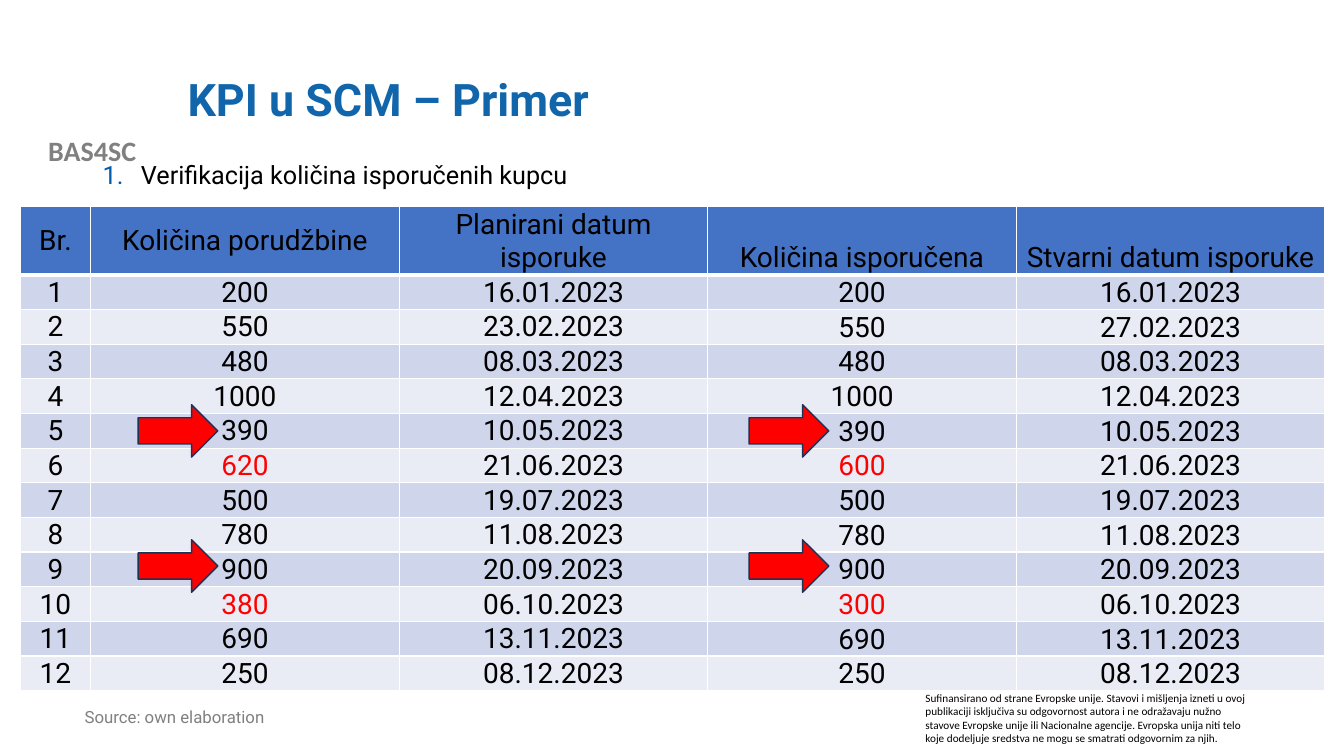
from lxml.etree import SubElement
from pptx import Presentation
from pptx.dml.color import RGBColor
from pptx.enum.shapes import MSO_SHAPE
from pptx.enum.text import MSO_ANCHOR as Anchor, MSO_AUTO_SIZE as AutoSize, PP_ALIGN as Align
from pptx.oxml.ns import qn
from pptx.util import Inches, Pt

BLACK = RGBColor(0x00, 0x00, 0x00)
WHITE = RGBColor(0xFF, 0xFF, 0xFF)
GRAY = RGBColor(0x80, 0x80, 0x80)
RED = RGBColor(0xFF, 0x00, 0x00)
NAVY = RGBColor(0x1E, 0x32, 0x56)
TITLE_BLUE = RGBColor(0x10, 0x65, 0xAB)
NUMBER_BLUE = RGBColor(0x01, 0x5B, 0xA6)
HEADER_BLUE = RGBColor(0x44, 0x72, 0xC4)
BANDS = (RGBColor(0xCF, 0xD5, 0xEA), RGBColor(0xE9, 0xEB, 0xF5))

TITLE = "KPI u SCM – Primer"
PROJECT = "BAS4SC"
SUBTITLE = "Verifikacija količina isporučenih kupcu"
SOURCE = "Source: own elaboration"
DISCLAIMER = (
    "Sufinansirano od strane Evropske unije. Stavovi i mišljenja izneti u ovoj "
    "publikaciji isključiva su odgovornost autora i ne odražavaju nužno stavove "
    "Evropske unije ili Nacionalne agencije. Evropska unija niti telo koje "
    "dodeljuje sredstva ne mogu se smatrati odgovornim za njih."
)
HEADER = ("Br.", "Količina porudžbine", "Planirani datum isporuke",
          "Količina isporučena", "Stvarni datum isporuke")
DELIVERIES = [  # ordered, planned date, delivered, actual date
    ("200", "16.01.2023", "200", "16.01.2023"),
    ("550", "23.02.2023", "550", "27.02.2023"),
    ("480", "08.03.2023", "480", "08.03.2023"),
    ("1000", "12.04.2023", "1000", "12.04.2023"),
    ("390", "10.05.2023", "390", "10.05.2023"),
    ("620", "21.06.2023", "600", "21.06.2023"),
    ("500", "19.07.2023", "500", "19.07.2023"),
    ("780", "11.08.2023", "780", "11.08.2023"),
    ("900", "20.09.2023", "900", "20.09.2023"),
    ("380", "06.10.2023", "300", "06.10.2023"),
    ("690", "13.11.2023", "690", "13.11.2023"),
    ("250", "08.12.2023", "250", "08.12.2023"),
]

TABLE_LEFT, TABLE_TOP = 0.2, 2.05
NUMBER_WIDTH, COLUMN_WIDTH = 0.7, 3.06
HEADER_HEIGHT, ROW_HEIGHT = 0.66, 0.335
ARROW_SIZE = (0.79, 0.52)
ARROW_RISE = 0.37
ARROW_INDENTS = {1: 0.47, 3: 0.41}  # quantity column: distance from its left edge


def format_text(paragraph, font, **layout):
    for name, value in layout.items():
        setattr(paragraph, name, value)
    color = font.pop("color")
    for name, value in font.items():
        setattr(paragraph.font, name, value)
    paragraph.font.color.rgb = color


def add_text(slide, text, box, font, **layout):
    shape = slide.shapes.add_textbox(*map(Inches, box))
    shape.text_frame.word_wrap = True
    paragraph = shape.text_frame.paragraphs[0]
    paragraph.text = text
    format_text(paragraph, font, **layout)
    return paragraph


def number_paragraph(paragraph):
    properties = paragraph._p.get_or_add_pPr()
    properties.set("marL", str(Inches(0.38)))
    properties.set("indent", str(-Inches(0.38)))
    color = SubElement(properties, qn("a:buClr"))
    SubElement(color, qn("a:srgbClr"), val=str(NUMBER_BLUE))
    SubElement(properties, qn("a:buAutoNum"), type="arabicPeriod")


def set_borders(cell, row):
    widths = {"L": 1, "R": 1, "T": 3 if row == 1 else 1, "B": 3 if row == 0 else 1}
    properties = cell._tc.get_or_add_tcPr()
    for side, width in widths.items():
        line = SubElement(properties, qn(f"a:ln{side}"), w=str(Pt(width)))
        SubElement(SubElement(line, qn("a:solidFill")), qn("a:srgbClr"), val=str(WHITE))


def fill_cell(cell, text, row, column, color):
    set_borders(cell, row)
    cell.fill.solid()
    cell.fill.fore_color.rgb = BANDS[(row - 1) % 2] if row else HEADER_BLUE
    cell.margin_left = cell.margin_right = cell.margin_top = Inches(0.01)
    cell.margin_bottom = 0
    cell.vertical_anchor = Anchor.BOTTOM if column > 2 else Anchor.MIDDLE
    cell.text = text
    format_text(cell.text_frame.paragraphs[0],
                dict(name="Roboto", size=Pt(20), bold=False, color=color),
                alignment=Align.CENTER)


def add_arrow(slide, row, column):
    left = TABLE_LEFT + NUMBER_WIDTH + (column - 1) * COLUMN_WIDTH + ARROW_INDENTS[column]
    top = TABLE_TOP + HEADER_HEIGHT + (row - 1) * ROW_HEIGHT - ARROW_RISE
    arrow = slide.shapes.add_shape(MSO_SHAPE.RIGHT_ARROW,
                                   *map(Inches, (left, top, *ARROW_SIZE)))
    arrow.shadow.inherit = False
    arrow.fill.solid()
    arrow.fill.fore_color.rgb = RED
    arrow.line.color.rgb = NAVY
    arrow.line.width = Pt(1)


def add_deliveries(slide):
    widths = [NUMBER_WIDTH] + [COLUMN_WIDTH] * 4
    heights = [HEADER_HEIGHT] + [ROW_HEIGHT] * len(DELIVERIES)
    table = slide.shapes.add_table(
        len(heights), len(widths),
        *map(Inches, (TABLE_LEFT, TABLE_TOP, sum(widths), sum(heights)))).table
    for column, width in zip(table.columns, widths):
        column.width = Inches(width)
    for row, height in zip(table.rows, heights):
        row.height = Inches(height)

    for column, text in enumerate(HEADER):
        fill_cell(table.cell(0, column), text, 0, column, BLACK)
    for row, delivery in enumerate(DELIVERIES, start=1):
        mismatch = delivery[0] != delivery[2]
        for column, text in enumerate((str(row), *delivery)):
            flagged = mismatch and column in ARROW_INDENTS
            fill_cell(table.cell(row, column), text, row, column, RED if flagged else BLACK)
            if flagged:
                add_arrow(slide, row, column)


def main():
    presentation = Presentation()
    presentation.slide_width, presentation.slide_height = Inches(13.33), Inches(7.5)
    slide = presentation.slides.add_slide(presentation.slide_layouts[5])

    title = slide.shapes.title
    title.left, title.top, title.width, title.height = map(Inches, (1.76, 0.4, 10.66, 1.22))
    title.text_frame.text = TITLE
    title.text_frame.vertical_anchor = Anchor.MIDDLE
    title.text_frame.auto_size = AutoSize.NONE
    format_text(title.text_frame.paragraphs[0],
                dict(name="Roboto", size=Pt(32), bold=True, color=TITLE_BLUE),
                alignment=Align.LEFT, line_spacing=0.9)

    add_text(slide, PROJECT, (0, 1.28, 1.83, 0.44),
             dict(name="Calibri", size=Pt(20), bold=True, color=GRAY), alignment=Align.CENTER)
    add_text(slide, DISCLAIMER, (9.08, 6.81, 3.42, 0.64),
             dict(name="Calibri", size=Pt(8), color=BLACK))
    subtitle = add_text(slide, SUBTITLE, (0.92, 1.57, 12.23, 0.4),
                        dict(name="Roboto", size=Pt(18), color=BLACK),
                        alignment=Align.JUSTIFY, line_spacing=0.9)
    number_paragraph(subtitle)
    add_text(slide, SOURCE, (0.74, 6.98, 5.01, 0.52),
             dict(name="Roboto", size=Pt(12), color=GRAY), line_spacing=0.9)
    add_deliveries(slide)
    presentation.save("out.pptx")


if __name__ == "__main__":
    main()
